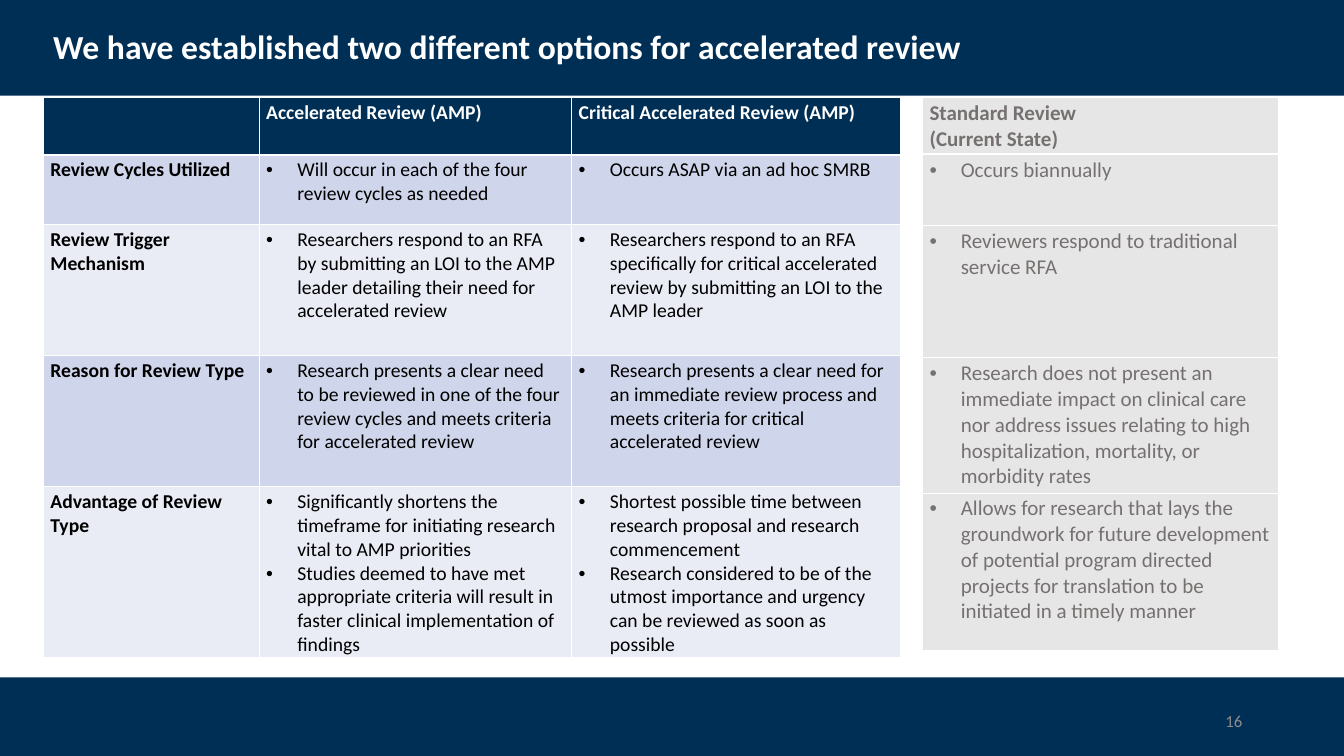
import pptx
import pptx.dml.color
import pptx.enum.shapes
import pptx.enum.text
import pptx.oxml
import pptx.oxml.ns
import pptx.util

Inches = pptx.util.Inches
Pt = pptx.util.Pt
RGBColor = pptx.dml.color.RGBColor
ANCHOR = pptx.enum.text.MSO_ANCHOR
ALIGN = pptx.enum.text.PP_ALIGN

NAVY = RGBColor(0x00, 0x2F, 0x56)
WHITE = RGBColor(0xFF, 0xFF, 0xFF)
BLACK = RGBColor(0x00, 0x00, 0x00)
BAND_DARK = RGBColor(0xCF, 0xD5, 0xEA)
BAND_LIGHT = RGBColor(0xE9, 0xEB, 0xF5)
PALE_GREY = RGBColor(0xE7, 0xE6, 0xE6)
TEXT_GREY = RGBColor(0x76, 0x71, 0x71)
NUMBER_GREY = RGBColor(0x8C, 0x8C, 0x8C)

FONT = "Calibri"
THIN, THICK = 0.6, 1.32
MARGINS = {
    "margin_left": Inches(0.07), "margin_right": Inches(0.07),
    "margin_top": Inches(0.03), "margin_bottom": Inches(0.03),
}

# Each cell is a list of paragraphs.
OPTIONS = [
    [[], ["Accelerated Review (AMP)"], ["Critical Accelerated Review (AMP)"]],
    [["Review Cycles Utilized"],
     ["Will occur in each of the four review cycles as needed"],
     ["Occurs ASAP via an ad hoc SMRB"]],
    [["Review Trigger", "Mechanism"],
     ["Researchers respond to an RFA by submitting an LOI to the AMP leader "
      "detailing their need for accelerated review"],
     ["Researchers respond to an RFA specifically for critical accelerated "
      "review by submitting an LOI to the AMP leader"]],
    [["Reason for Review Type"],
     ["Research presents a clear need to be reviewed in one of the four "
      "review cycles and meets criteria for accelerated review"],
     ["Research presents a clear need for an immediate review process and "
      "meets criteria for critical accelerated review"]],
    [["Advantage of Review Type"],
     ["Significantly shortens the timeframe for initiating research vital to "
      "AMP priorities",
      "Studies deemed to have met appropriate criteria will result in faster "
      "clinical implementation of findings"],
     ["Shortest possible time between research proposal and research "
      "commencement",
      "Research considered to be of the utmost importance and urgency can be "
      "reviewed as soon as possible"]],
]
STANDARD = [
    [["Standard Review", "(Current State)"]],
    [["Occurs biannually"]],
    [["Reviewers respond to traditional service RFA"]],
    [["Research does not present an immediate impact on clinical care nor "
      "address issues relating to high hospitalization, mortality, or "
      "morbidity rates"]],
    [["Allows for research that lays the groundwork for future development "
      "of potential program directed projects for translation to be "
      "initiated in a timely manner"]],
]


def set_attrs(obj, values):
    for name, value in values.items():
        setattr(obj, name, value)


def add_run(p, text, size, color, bold=False):
    r = p.add_run()
    r.text = text
    set_attrs(r.font, {"name": FONT, "size": Pt(size), "bold": bold})
    r.font.color.rgb = color


def add_band(slide, top, height):
    sp = slide.shapes.add_shape(
        pptx.enum.shapes.MSO_SHAPE.RECTANGLE,
        0, Inches(top), Inches(13.33), Inches(height))
    sp.shadow.inherit = False
    sp.fill.solid()
    sp.fill.fore_color.rgb = NAVY
    sp.line.fill.background()


def add_label(slide, box, text, size, color, bold=False, **paragraph_format):
    tf = slide.shapes.add_textbox(*map(Inches, box)).text_frame
    set_attrs(tf, {"word_wrap": True, "vertical_anchor": ANCHOR.MIDDLE})
    p = tf.paragraphs[0]
    set_attrs(p, paragraph_format)
    add_run(p, text, size, color, bold)


def add_bullet(p):
    pPr = p._p.get_or_add_pPr()
    pPr.set("marL", str(Inches(0.31)))
    pPr.set("indent", str(Inches(-0.31)))
    ns = pptx.oxml.ns.nsdecls("a")
    pPr.append(pptx.oxml.parse_xml(f'<a:buFont {ns} typeface="Arial"/>'))
    pPr.append(pptx.oxml.parse_xml(f'<a:buChar {ns} char="•"/>'))


def set_borders(cell, row):
    """Draw white borders, thicker between the header and the first body row."""
    ns = pptx.oxml.ns.nsdecls("a")
    tcPr = cell._tc.get_or_add_tcPr()
    for side in "LRTB":
        width = THICK if (row, side) in ((0, "B"), (1, "T")) else THIN
        tcPr.append(pptx.oxml.parse_xml(
            f'<a:ln{side} {ns} w="{Pt(width)}"><a:solidFill>'
            f'<a:srgbClr val="{WHITE}"/></a:solidFill></a:ln{side}>'))


def fill_cell(cell, row, paragraphs, fill, size, color, bold, bulleted):
    set_borders(cell, row)
    set_attrs(cell, MARGINS)
    cell.fill.solid()
    cell.fill.fore_color.rgb = fill
    tf = cell.text_frame
    for i, text in enumerate(paragraphs):
        p = tf.add_paragraph() if i else tf.paragraphs[0]
        if bulleted:
            add_bullet(p)
        add_run(p, text, size, color, bold)


def add_review_table(slide, left, widths, heights, rows, size, header, body,
                     fills, label_column):
    """header and body are text colours; fills are header, odd and even rows."""
    table = slide.shapes.add_table(
        len(rows), len(widths), Inches(left), Inches(0.97),
        Inches(sum(widths)), Inches(sum(heights))).table
    for column, width in zip(table.columns, widths):
        column.width = Inches(width)
    for i, (cells, height) in enumerate(zip(rows, heights)):
        table.rows[i].height = Inches(height)
        fill = fills[0] if i == 0 else fills[1 if i % 2 else 2]
        for j, paragraphs in enumerate(cells):
            bold = i == 0 or (label_column and j == 0)
            fill_cell(table.cell(i, j), i, paragraphs, fill, size,
                      body if i else header, bold, not bold)


def main():
    prs = pptx.Presentation()
    set_attrs(prs, {"slide_width": Inches(13.33), "slide_height": Inches(7.5)})
    slide = prs.slides.add_slide(prs.slide_layouts[6])

    add_band(slide, 0, 0.95)
    add_band(slide, 6.72, 0.78)
    add_label(slide, (0.43, 0.11, 11.5, 0.74),
              "We have established two different options for accelerated review",
              24, WHITE, bold=True, line_spacing=0.9)
    add_label(slide, (9.42, 6.95, 3, 0.4), "16", 12, NUMBER_GREY,
              alignment=ALIGN.RIGHT)

    add_review_table(slide, 0.43, [2.14, 3.1, 3.26],
                     [0.57, 0.69, 1.3, 1.3, 1.55], OPTIONS, 14, WHITE, BLACK,
                     (NAVY, BAND_DARK, BAND_LIGHT), label_column=True)
    add_review_table(slide, 9.15, [3.53], [0.55, 0.71, 1.31, 1.34, 1.56],
                     STANDARD, 15, TEXT_GREY, TEXT_GREY, (PALE_GREY,) * 3,
                     label_column=False)
    prs.save("out.pptx")


if __name__ == "__main__":
    main()
